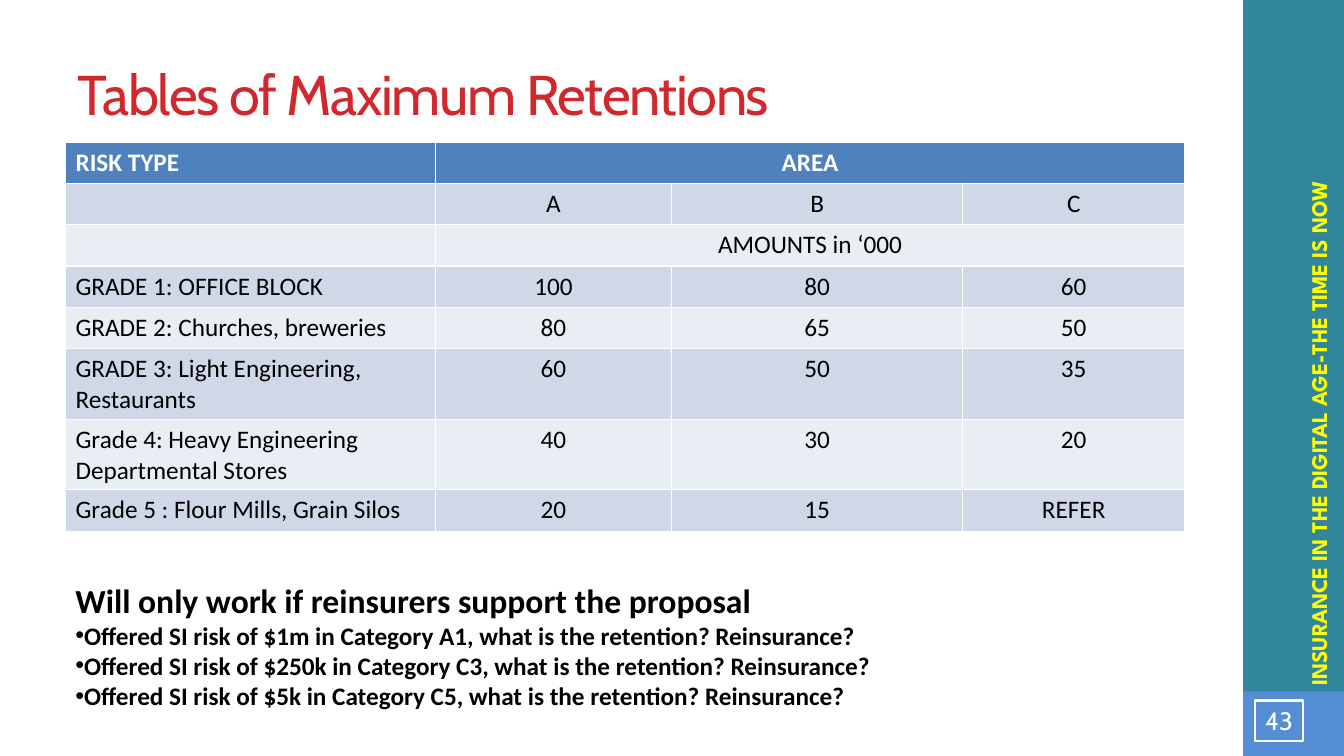
from lxml.etree import SubElement
from pptx import Presentation
from pptx.dml.color import RGBColor
from pptx.enum.shapes import MSO_SHAPE
from pptx.enum.text import MSO_ANCHOR, MSO_AUTO_SIZE, PP_ALIGN
from pptx.oxml.ns import qn
from pptx.util import Inches, Pt

TITLE = "Tables of Maximum Retentions"
SLOGAN = "INSURANCE IN THE DIGITAL AGE-THE TIME IS NOW"
PAGE_NUMBER = "43"
# A row with two entries has its second one spread over the three areas
ROWS = [
    ("RISK TYPE", "AREA"),
    ("", "A", "B", "C"),
    ("", "AMOUNTS in ‘000"),
    ("GRADE 1: OFFICE BLOCK", "100", "80", "60"),
    ("GRADE 2: Churches, breweries", "80", "65", "50"),
    ("GRADE 3: Light Engineering, Restaurants", "60", "50", "35"),
    ("Grade 4: Heavy Engineering Departmental Stores", "40", "30", "20"),
    ("Grade 5 : Flour Mills, Grain Silos", "20", "15", "REFER"),
]
COLUMN_WIDTHS = [3.67, 2.34, 2.89, 2.2]
ROW_HEIGHT = 0.41
CONDITION = "Will only work if reinsurers support the proposal"
QUESTIONS = [
    "Offered SI risk of $1m in Category A1, what is the retention? Reinsurance?",
    "Offered SI risk of $250k in Category C3, what is the retention? Reinsurance?",
    "Offered SI risk of $5k in Category C5, what is the retention? Reinsurance?",
]
HEADER_FILL = "4F81BD"
BAND_FILLS = ["E9EDF4", "D0D8E8"]


def color(value):
    return RGBColor.from_string(value)


def add_text(para, text, size, font, ink, bold=False):
    span = para.add_run()
    span.text = text
    span.font.size = Pt(size)
    span.font.name = font
    span.font.bold = bold
    span.font.color.rgb = color(ink)
    return span


def add_box(page, left, top, width, height):
    box = page.shapes.add_textbox(Inches(left), Inches(top), Inches(width), Inches(height))
    box.text_frame.word_wrap = True
    return box


def add_rectangle(page, left, top, width, height, fill=None, line=None):
    box = page.shapes.add_shape(MSO_SHAPE.RECTANGLE, Inches(left), Inches(top),
                                Inches(width), Inches(height))
    box.shadow.inherit = False
    if fill:
        box.fill.solid()
        box.fill.fore_color.rgb = color(fill)
    else:
        box.fill.background()
    if line:
        box.line.color.rgb = color(line)
        box.line.width = Pt(1.5)
    else:
        box.line.fill.background()
    return box


deck = Presentation()
deck.slide_width, deck.slide_height = Inches(13.33), Inches(7.5)
page = deck.slides.add_slide(deck.slide_layouts[5])

# Side band with the slogan running upwards
add_rectangle(page, 12.33, 0, 1, 7.5, fill="31859C")
add_rectangle(page, 12.33, 6.86, 1, 0.64, fill="558ED5")
slogan = add_box(page, 9.53, 3.17, 7.09, 0.37)
slogan.rotation = 270
add_text(slogan.text_frame.paragraphs[0], SLOGAN, 16, "League Spartan", "FFFF00", True)

# Title
title = page.shapes.title
title.left, title.top = Inches(0.67), Inches(0.3)
title.width, title.height = Inches(11.11), Inches(1.25)
title.text_frame.auto_size = MSO_AUTO_SIZE.NONE
title.text_frame.vertical_anchor = MSO_ANCHOR.MIDDLE
para = title.text_frame.paragraphs[0]
para.alignment = PP_ALIGN.LEFT
span = add_text(para, TITLE, 40, "Cabin", "D1282E")
span.font._element.set("spc", "-100")

# Retention table
table = page.shapes.add_table(
    len(ROWS), len(COLUMN_WIDTHS), Inches(0.65), Inches(1.41),
    Inches(sum(COLUMN_WIDTHS)), Inches(ROW_HEIGHT * len(ROWS))).table
for column, width in zip(table.columns, COLUMN_WIDTHS):
    column.width = Inches(width)
for r, entries in enumerate(ROWS):
    header = r == 0
    table.rows[r].height = Inches(ROW_HEIGHT)
    for c in range(len(COLUMN_WIDTHS)):
        cell = table.cell(r, c)
        cell.fill.solid()
        cell.fill.fore_color.rgb = color(HEADER_FILL if header else BAND_FILLS[r % 2])
    if len(entries) == 2:
        table.cell(r, 1).merge(table.cell(r, 3))
    for c, entry in enumerate(entries):
        para = table.cell(r, c).text_frame.paragraphs[0]
        para.alignment = PP_ALIGN.CENTER if c else PP_ALIGN.LEFT
        if entry:
            add_text(para, entry, 18, "Calibri", "FFFFFF" if header else "000000", header)
        else:
            para.font.size = Pt(18)

# Page number
number = add_rectangle(page, 12.45, 6.95, 0.47, 0.4, line="FFFFFF")
frame = number.text_frame
frame.margin_left = frame.margin_top = frame.margin_right = frame.margin_bottom = 0
frame.vertical_anchor = MSO_ANCHOR.MIDDLE
frame.paragraphs[0].alignment = PP_ALIGN.CENTER
add_text(frame.paragraphs[0], PAGE_NUMBER, 18, "Cabin", "FFFFFF")

# Condition and questions below the table
frame = add_box(page, 0.65, 5.7, 11.17, 2.12).text_frame
add_text(frame.paragraphs[0], CONDITION, 24, "Calibri", "000000", True)
for question in QUESTIONS:
    para = frame.add_paragraph()
    properties = para._p.get_or_add_pPr()
    SubElement(properties, qn("a:buFont"), typeface="Arial")
    SubElement(properties, qn("a:buChar"), char="•")
    add_text(para, question, 18, "Calibri", "000000", True)

deck.save("out.pptx")
